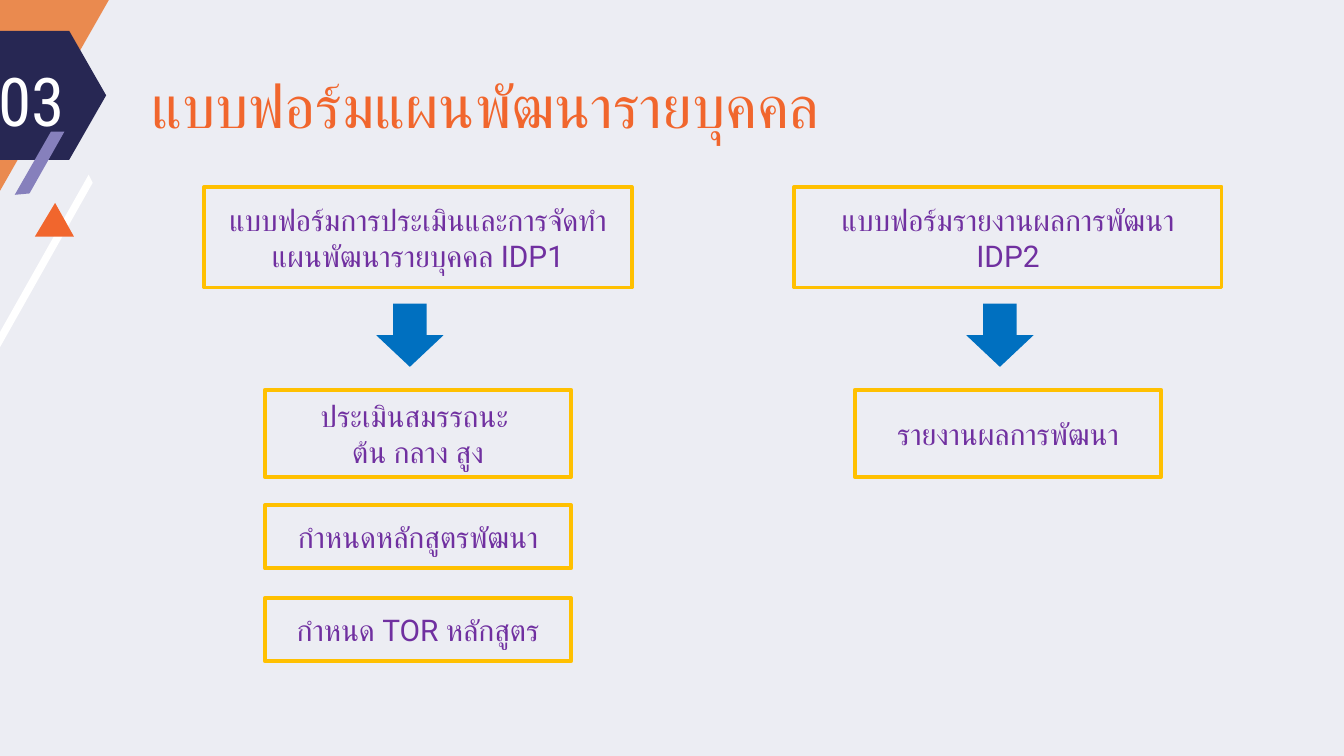
from lxml import etree
from pptx import Presentation
from pptx.dml.color import RGBColor
from pptx.enum import shapes as sh, text as tx
from pptx.oxml import ns
from pptx.util import Inches, Pt

COLORS = {
    "back": "ECEDF3", "peach": "EA8A4F", "orange": "F1662D", "navy": "272753",
    "lilac": "8680BC", "white": "FFFFFF", "gold": "FFC000", "violet": "7030A0",
    "blue": "0070C0",
}

# Loose polygons of the corner motif, in inches
PEACH = [(0, 0), (0.81, 0), (0, 1.42)]
STRIPE = [(-0.09, 2.63), (0.66, 1.3), (0.69, 1.36), (-0.06, 2.69)]
PEAK = [(0.26, 1.76), (0.55, 1.76), (0.41, 1.51)]
SLASH = [(0.38, 0.98), (0.11, 1.45), (0.22, 1.44), (0.48, 0.98)]

# Each column: left edge, form name, steps as (top, height, text)
COLUMNS = [
    (1.52, "แบบฟอร์มการประเมินและการจัดทำแผนพัฒนารายบุคคล IDP1", [
        (2.9, 0.65, "ประเมินสมรรถนะ \nต้น กลาง สูง"),
        (3.76, 0.47, "กำหนดหลักสูตรพัฒนา"),
        (4.45, 0.47, "กำหนด TOR หลักสูตร"),
    ]),
    (5.91, "แบบฟอร์มรายงานผลการพัฒนา IDP2", [
        (2.9, 0.65, "รายงานผลการพัฒนา"),
    ]),
]
WIDTH = 10
FORM_W, STEP_W, ARROW_W = 3.18, 2.28, 0.5


def color(name):
    return RGBColor.from_string(COLORS[name])


def paint(shape, fill, line=None):
    shape.shadow.inherit = False
    shape.fill.solid()
    shape.fill.fore_color.rgb = color(fill)
    if line:
        shape.line.color.rgb = color(line)
        shape.line.width = Pt(2)
    else:
        shape.line.fill.background()


def write(shape, words, size, tone, align, font="Roboto", inset=None):
    frame = shape.text_frame
    frame.text = words
    frame.word_wrap = True
    frame.auto_size = tx.MSO_AUTO_SIZE.NONE
    frame.vertical_anchor = tx.MSO_ANCHOR.MIDDLE
    if inset is not None:
        frame.margin_left = frame.margin_right = Inches(inset)
        frame.margin_top = frame.margin_bottom = Inches(inset)
    for para in frame.paragraphs:
        para.alignment = align
        for run in para.runs:
            run.font.size = Pt(size)
            run.font.name = font
            run.font.color.rgb = color(tone)
            # Thai letters take the complex-script font
            script = etree.SubElement(run.font._element, ns.qn("a:cs"))
            script.set("typeface", font)


def add_shape(slide, kind, left, top, width, height, fill, line=None):
    shape = slide.shapes.add_shape(
        kind, Inches(left), Inches(top), Inches(width), Inches(height))
    paint(shape, fill, line)
    return shape


def add_poly(slide, points, fill):
    spots = [(Inches(x), Inches(y)) for x, y in points]
    pen = slide.shapes.build_freeform(*spots[0])
    pen.add_line_segments(spots[1:], close=True)
    paint(pen.convert_to_shape(), fill)


def add_box(slide, left, top, width, height, words):
    box = add_shape(slide, sh.MSO_SHAPE.RECTANGLE, left, top, width, height,
                    "back", "gold")
    write(box, words, 16, "violet", tx.PP_ALIGN.CENTER)


def add_motif(slide):
    add_poly(slide, PEACH, "peach")
    add_poly(slide, STRIPE, "white")
    add_poly(slide, PEAK, "orange")
    badge = add_shape(slide, sh.MSO_SHAPE.HEXAGON, -0.29, 0.23, 1.08, 0.96, "navy")
    badge.adjustments[0] = 0.286
    add_poly(slide, SLASH, "lilac")


def add_titles(slide):
    # Section number, raised above the badge
    title = slide.shapes.title
    title.left, title.top = Inches(-0.11), Inches(0.37)
    title.width, title.height = Inches(0.75), Inches(0.74)
    write(title, "03", 36, "white", tx.PP_ALIGN.LEFT, "Roboto Condensed", 0.1)
    slide.shapes._spTree.append(title._element)

    # Heading
    head = slide.shapes.add_textbox(
        Inches(1.03), Inches(0.58), Inches(7.53), Inches(0.32))
    write(head, "แบบฟอร์มแผนพัฒนารายบุคคล", 32, "orange",
          tx.PP_ALIGN.LEFT, inset=0.1)
    head.text_frame.paragraphs[0].line_spacing = 1.15


def add_column(slide, left, form, steps):
    for top, height, words in steps:
        add_box(slide, left + (FORM_W - STEP_W) / 2, top, STEP_W, height, words)
    add_box(slide, left, 1.39, FORM_W, 0.75, form)
    add_shape(slide, sh.MSO_SHAPE.DOWN_ARROW, left + 1.28, 2.26, ARROW_W, 0.47, "blue")


def main():
    # Widescreen 16:9 page
    deck = Presentation()
    deck.slide_width, deck.slide_height = Inches(WIDTH), Inches(WIDTH * 9 / 16)
    slide = deck.slides.add_slide(deck.slide_layouts[5])
    slide.background.fill.solid()
    slide.background.fill.fore_color.rgb = color("back")

    add_motif(slide)
    add_titles(slide)
    for column in COLUMNS:
        add_column(slide, *column)
    deck.save("out.pptx")


if __name__ == "__main__":
    main()
